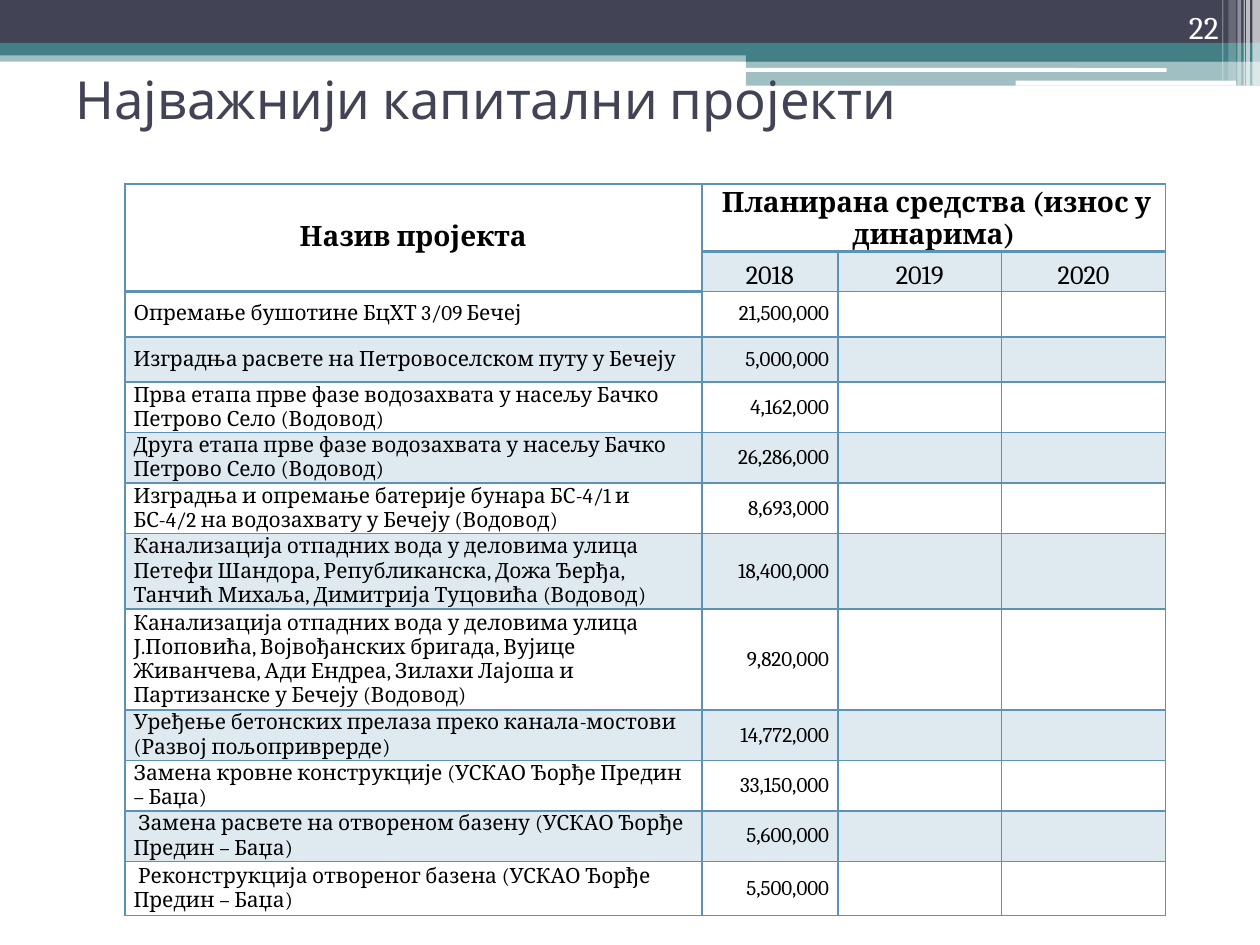
from typing import NamedTuple

from lxml import etree
from pptx import Presentation
from pptx.dml.color import RGBColor
from pptx.enum import shapes, text
from pptx.oxml import ns
from pptx.util import Inches, Pt

NAVY = RGBColor(0x42, 0x44, 0x56)
TEAL = RGBColor(0x43, 0x80, 0x86)
BLUE = RGBColor(0x5C, 0x92, 0xB5)
WHITE = RGBColor(0xFF, 0xFF, 0xFF)
BLACK = RGBColor(0, 0, 0)
RECTANGLE = shapes.MSO_SHAPE.RECTANGLE
ROUNDED = shapes.MSO_SHAPE.ROUNDED_RECTANGLE
LEFT, CENTER, RIGHT = text.PP_ALIGN.LEFT, text.PP_ALIGN.CENTER, text.PP_ALIGN.RIGHT
MIDDLE, BOTTOM = text.MSO_ANCHOR.MIDDLE, text.MSO_ANCHOR.BOTTOM


class Bar(NamedTuple):
    left: float
    top: float
    width: float
    height: float
    color: RGBColor
    opacity: int = 100
    outline: shapes.MSO_SHAPE = RECTANGLE


class Style(NamedTuple):
    size: float
    font: str = "Cambria"
    color: RGBColor = BLACK
    bold: bool = False
    align: text.PP_ALIGN = LEFT
    anchor: text.MSO_ANCHOR = MIDDLE


class Project(NamedTuple):
    name: str
    amount: str
    height: float = 0.39


BARS = [
    Bar(0, 0.4, 10, 0.09, TEAL, 50),
    Bar(0, 0, 10, 0.34, NAVY),
    Bar(0, 0.34, 10, 0.1, TEAL),
    Bar(5.92, 0.39, 4.08, 0.1, TEAL),
    Bar(5.92, 0.48, 4.08, 0.2, TEAL, 50),
    Bar(5.91, 0.54, 3.35, 0.03, WHITE, outline=ROUNDED),
    Bar(8.06, 0.64, 1.75, 0.04, WHITE, outline=ROUNDED),
    Bar(9.94, 0, 0.06, 0.68, WHITE, 65),
    Bar(9.89, 0, 0.03, 0.68, WHITE, 65),
    Bar(9.87, 0, 0.01, 0.68, WHITE, 60),
    Bar(9.82, 0, 0.03, 0.68, WHITE, 40),
    Bar(9.75, 0, 0.06, 0.64, WHITE, 20),
    Bar(9.7, 0, 0.01, 0.64, WHITE, 30),
]
PROJECTS = [
    Project("Опремање бушотине БцХТ 3/09 Бечеј", "21,500,000", 0.36),
    Project("Изградња расвете на Петровоселском путу у Бечеју", "5,000,000", 0.36),
    Project("Прва етапа прве фазе водозахвата у насељу Бачко Петрово Село (Водовод)",
            "4,162,000"),
    Project("Друга етапа прве фазе водозахвата у насељу Бачко Петрово Село (Водовод)",
            "26,286,000"),
    Project("Изградња и опремање батерије бунара БС-4/1 и БС-4/2 на водозахвату "
            "у Бечеју (Водовод)", "8,693,000"),
    Project("Канализација отпадних вода у деловима улица Петефи Шандора, Републиканска, "
            "Дожа Ђерђа, Танчић Михаља, Димитрија Туцовића (Водовод)", "18,400,000", 0.58),
    Project("Канализација отпадних вода у деловима улица Ј.Поповића, Војвођанских бригада, "
            "Вујице Живанчева, Ади Ендреа, Зилахи Лајоша и Партизанске у Бечеју (Водовод)",
            "9,820,000", 0.77),
    Project("Уређење бетонских прелаза преко канала-мостови (Развој пољоприврерде)",
            "14,772,000"),
    Project("Замена кровне конструкције (УСКАО Ђорђе Предин – Баџа)", "33,150,000"),
    Project(" Замена расвете на отвореном базену (УСКАО Ђорђе Предин – Баџа)",
            "5,600,000"),
    Project(" Реконструкција отвореног базена (УСКАО Ђорђе Предин – Баџа)",
            "5,500,000", 0.43),
]
COLUMN_WIDTHS = [4.58, 1.08, 1.3, 1.3]
HEADER_HEIGHTS = [0.52, 0.32]
HEADING = Style(16, bold=True, align=CENTER)
YEAR = Style(15, align=CENTER, anchor=BOTTOM)
NAME = Style(12)
AMOUNT = Style(12, align=RIGHT)


def set_opacity(properties, percent: int) -> None:
    color = properties.find(ns.qn("a:solidFill"))[0]
    etree.SubElement(color, ns.qn("a:alpha"), val=str(percent * 1000))


def draw_bar(page, bar: Bar) -> None:
    shape = page.shapes.add_shape(
        bar.outline, Inches(bar.left), Inches(bar.top), Inches(bar.width), Inches(bar.height))
    shape.shadow.inherit = False
    shape.line.fill.background()
    shape.fill.solid()
    shape.fill.fore_color.rgb = bar.color
    if bar.opacity < 100:
        set_opacity(shape._element.spPr, bar.opacity)


def write(frame, words: str, style: Style) -> None:
    para = frame.paragraphs[0]
    para.text = words
    para.alignment = style.align
    para.font.size = Pt(style.size)
    para.font.name = style.font
    para.font.bold = style.bold
    para.font.color.rgb = style.color


def draw_text(page, left: float, top: float, width: float, height: float,
              words: str, style: Style) -> None:
    box = page.shapes.add_textbox(Inches(left), Inches(top), Inches(width), Inches(height))
    box.text_frame.word_wrap = True
    box.text_frame.vertical_anchor = style.anchor
    write(box.text_frame, words, style)


def format_cell(cell, words: str, style: Style, shaded: bool, bottom_width: float) -> None:
    cell.margin_left = cell.margin_right = Inches(0.07)
    cell.margin_top = cell.margin_bottom = 0
    cell.vertical_anchor = style.anchor
    write(cell.text_frame, words, style)
    properties = cell._tc.get_or_add_tcPr()
    for side, width in zip("LRTB", (1, 1, 1, bottom_width)):
        border = etree.SubElement(properties, ns.qn(f"a:ln{side}"), w=str(Pt(width)))
        paint = etree.SubElement(border, ns.qn("a:solidFill"))
        etree.SubElement(paint, ns.qn("a:srgbClr"), val=str(BLUE))
    if shaded:
        cell.fill.solid()
        cell.fill.fore_color.rgb = BLUE
        set_opacity(properties, 20)
    else:
        cell.fill.background()


def draw_projects(page) -> None:
    heights = HEADER_HEIGHTS + [project.height for project in PROJECTS]
    table = page.shapes.add_table(
        len(heights), len(COLUMN_WIDTHS), Inches(0.99), Inches(1.46),
        Inches(sum(COLUMN_WIDTHS)), Inches(sum(heights))).table
    table.first_row = table.horz_banding = False
    for column, width in zip(table.columns, COLUMN_WIDTHS):
        column.width = Inches(width)
    for row, height in zip(table.rows, heights):
        row.height = Inches(height)

    funds = HEADING._replace(anchor=BOTTOM)
    rows = [
        (["Назив пројекта", " Планирана средства (износ у динарима)", "", ""],
         [HEADING, funds, funds, funds]),
        (["", "2018", "2019", "2020"], [HEADING, YEAR, YEAR, YEAR]),
    ]
    rows += [([project.name, project.amount, "", ""], [NAME, AMOUNT, AMOUNT, AMOUNT])
             for project in PROJECTS]
    for row, (words, styles) in enumerate(rows):
        for column, (content, style) in enumerate(zip(words, styles)):
            heading = style.bold
            shaded = row % 2 == 1 and not heading
            format_cell(table.cell(row, column), content, style, shaded, 2 if heading else 1)
    table.cell(0, 0).merge(table.cell(1, 0))
    table.cell(0, 1).merge(table.cell(0, 3))


def main() -> None:
    deck = Presentation()
    deck.slide_width, deck.slide_height = Inches(10), Inches(7.5)
    page = deck.slides.add_slide(deck.slide_layouts[6])
    for bar in BARS:
        draw_bar(page, bar)
    draw_text(page, 0.5, 0.3, 9, 0.96, "Најважнији капитални пројекти",
              Style(30, "Cabin", NAVY))
    draw_projects(page)
    draw_text(page, 8.94, 0.01, 0.83, 0.4, "22",
              Style(18, color=WHITE, align=RIGHT, anchor=BOTTOM))
    deck.save("out.pptx")


if __name__ == "__main__":
    main()
